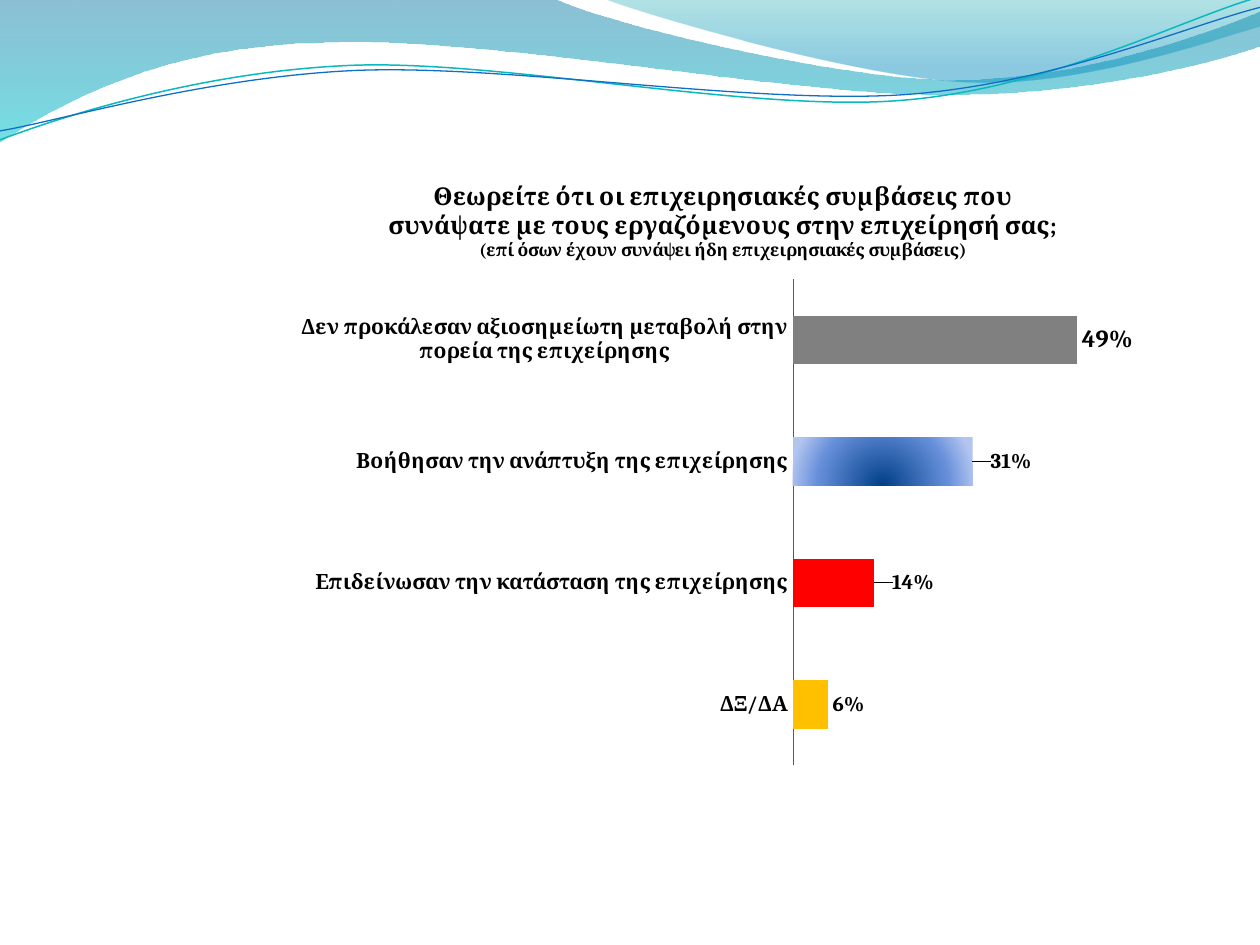
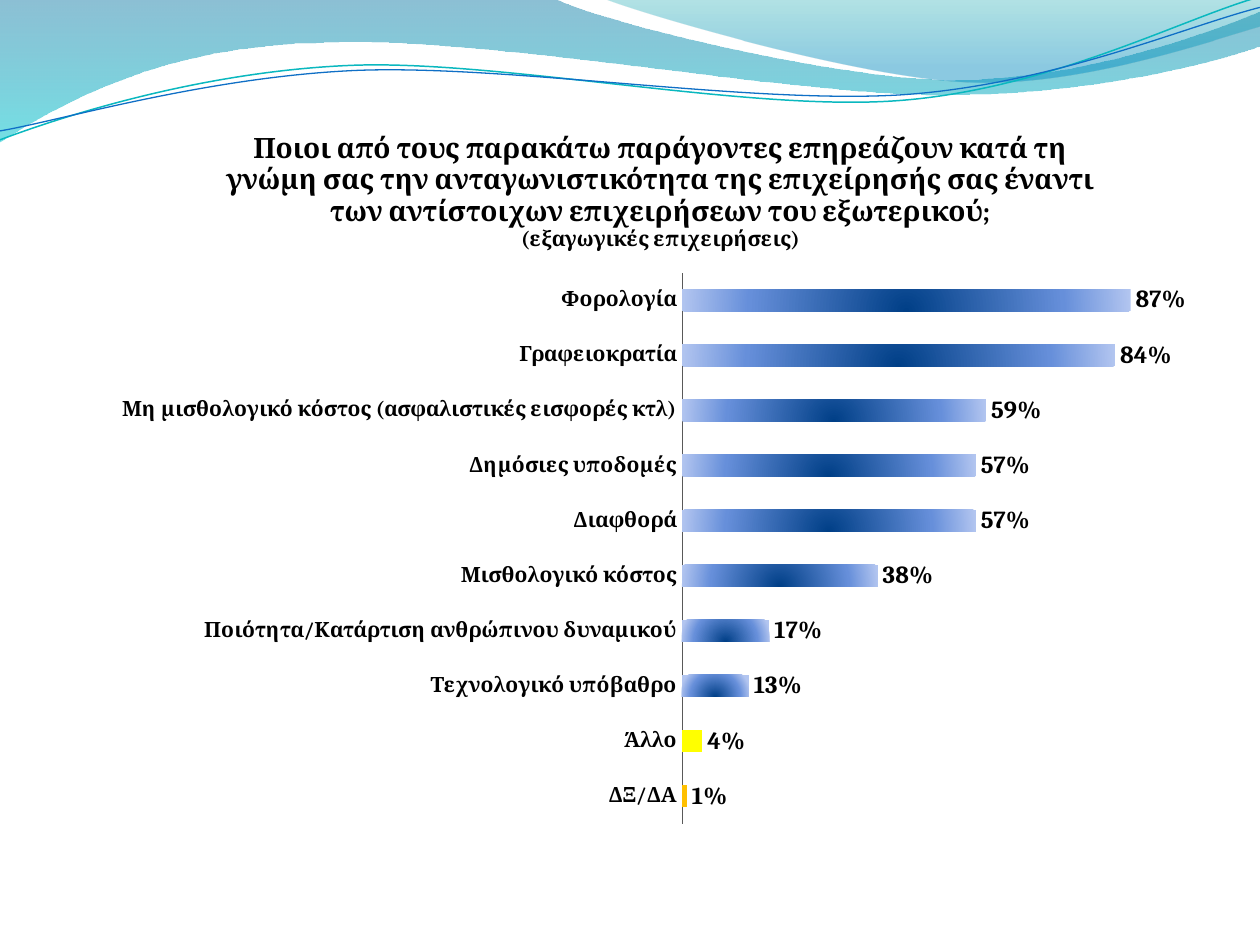
"""Build two survey slides with bar charts under a shared wave header."""
from lxml import etree
from pptx import Presentation
from pptx.chart.data import CategoryChartData
from pptx.dml.color import RGBColor
from pptx.enum.chart import XL_CHART_TYPE, XL_LABEL_POSITION, XL_TICK_LABEL_POSITION, XL_TICK_MARK
from pptx.oxml import parse_xml
from pptx.oxml.ns import nsdecls, qn
from pptx.util import Cm, Pt

BAR_CLUSTERED = XL_CHART_TYPE.BAR_CLUSTERED
OUTSIDE_END = XL_LABEL_POSITION.OUTSIDE_END
NEXT_TO_AXIS = XL_TICK_LABEL_POSITION.NEXT_TO_AXIS
NO_TICKS = XL_TICK_MARK.NONE

FONT = "Cambria"
BLANK_LAYOUT = 6
COLORS = {
    "text": "000000", "axis": "595959",
    "gray": "808080", "red": "FF0000", "amber": "FFC000", "yellow": "FFFF00",
    "bar_center": "003F87", "bar_middle": "668FDA", "bar_edge": "B2C5F0",
    "band_blue": "0074A1", "band_aqua": "00C6CF",
    "veil_teal": "00A1A9", "veil_blue": "008BBF",
    "line_teal": "0AB8BF", "line_blue": "0F6FC6",
}
BAR_STOPS = [(0, "bar_center", 100), (70, "bar_middle", 100), (100, "bar_edge", 100)]
RADIAL = '<a:path path="circle"><a:fillToRect l="50000" t="100000" r="50000"/></a:path>'
DOWNWARD = '<a:lin ang="5400000" scaled="0"/>'
NO_LEADER_LINES = (
    f'<c:extLst {nsdecls("c")}><c:ext uri="{{CE6537A1-D6FC-4f65-9D91-7224C49458BB}}" '
    'xmlns:c15="http://schemas.microsoft.com/office/drawing/2012/chart">'
    '<c15:showLeaderLines val="0"/></c:ext></c:extLst>')

WAVE_BANDS = [
    {
        "start": (0, -0.03),
        "segments": [
            (11.18, -0.03),
            (12.09, 0.43, 16.87, 1.6, 19.25, 1.6),
            (21.79, 1.6, 24.33, 0.66, 25.4, 0.23),
            (25.43, 0.91),
            (24.97, 1.12, 22.1, 1.93, 18.95, 1.91),
            (15.8, 1.91, 9.7, 0.71, 6.53, 0.86),
            (3.28, 0.89, 1.17, 2.11, -0.03, 2.87),
        ],
        "stops": [(0, "band_blue", 45), (100, "band_aqua", 55)],
    },
    {
        "start": (12.17, -0.03),
        "segments": [
            (12.93, 0.28, 17.32, 1.57, 19.53, 1.65),
            (21.74, 1.75, 24.41, 0.81, 25.4, 0.53),
            (25.4, 0),
        ],
        "stops": [(0, "veil_teal", 30), (80, "veil_blue", 45)],
    },
]
WAVE_LINES = [
    {
        "start": (0, 2.82),
        "segments": [
            (1.22, 2.36, 4.01, 1.45, 7.04, 1.32),
            (10.03, 1.19, 15.06, 2.26, 18.11, 2.03),
            (21.16, 1.8, 23.83, 0.38, 25.35, -0.05),
        ],
        "color": "line_teal", "width": 0.85,
    },
    {
        "start": (0, 2.64),
        "segments": [
            (1.19, 2.44, 4.17, 1.55, 7.19, 1.42),
            (10.24, 1.3, 15.16, 2.11, 18.21, 1.91),
            (21.23, 1.7, 23.9, 0.53, 25.4, 0.15),
        ],
        "color": "line_blue", "width": 0.75,
    },
]

SURVEY_CHARTS = [
    {
        "title": [
            ("Θεωρείτε ότι οι επιχειρησιακές συμβάσεις που συνάψατε με τους "
             "εργαζόμενους στην επιχείρησή σας;", 14),
            ("(επί όσων έχουν συνάψει ήδη επιχειρησιακές συμβάσεις)", 10),
        ],
        "answers": [
            ("Δεν προκάλεσαν αξιοσημείωτη μεταβολή στην πορεία της επιχείρησης", 0.49),
            ("Βοήθησαν την ανάπτυξη της επιχείρησης", 0.31),
            ("Επιδείνωσαν την κατάσταση της επιχείρησης", 0.14),
            ("ΔΞ/ΔΑ", 0.06),
        ],
        "box": (5.72, 3.18, 17.7, 12.5),
        "plot": {"x": 0.58, "y": 0.196, "w": 0.396, "h": 0.784},
        "maximum": 0.6,
        "reverse": True,
        "point_colors": {0: "gray", 2: "red", 3: "amber"},
        "label_size": 12,
        "label_sizes": {0: 14},
        "label_shifts": {1: 0.015, 2: 0.015},
    },
    {
        "title": [
            ("Ποιοι από τους παρακάτω παράγοντες επηρεάζουν κατά τη γνώμη σας την "
             "ανταγωνιστικότητα της επιχείρησής σας έναντι των αντίστοιχων "
             "επιχειρήσεων του εξωτερικού;", 16),
            ("(εξαγωγικές επιχειρήσεις)", 12),
        ],
        "answers": [
            ("ΔΞ/ΔΑ", 0.01),
            ("Άλλο", 0.04),
            ("Τεχνολογικό υπόβαθρο", 0.13),
            ("Ποιότητα/Κατάρτιση ανθρώπινου δυναμικού", 0.17),
            ("Μισθολογικό κόστος", 0.38),
            ("Διαφθορά", 0.57),
            ("Δημόσιες υποδομές", 0.57),
            ("Μη μισθολογικό κόστος (ασφαλιστικές εισφορές κτλ)", 0.59),
            ("Γραφειοκρατία", 0.84),
            ("Φορολογία", 0.87),
        ],
        "box": (2.01, 2.13, 22.61, 14.76),
        "plot": {"x": 0.519, "y": 0.228, "w": 0.46, "h": 0.753},
        "maximum": 1,
        "reverse": False,
        "point_colors": {0: "amber", 1: "yellow"},
        "label_size": 14,
        "label_sizes": {},
        "label_shifts": {},
    },
]


def color(name):
    """Return the named colour."""
    return RGBColor.from_string(COLORS[name])


def format_font(font, *, size, bold=True):
    """Apply the shared typeface and colour to a font."""
    font.name = FONT
    font.size = Pt(size)
    font.bold = bold
    font.color.rgb = color("text")


def write_text(paragraph, text, *, size, bold=True):
    """Write one formatted run into a paragraph."""
    run = paragraph.add_run()
    run.text = text
    format_font(run.font, size=size, bold=bold)


def set_gradient(fill, properties, stops, direction):
    """Replace the fill of a properties element by a gradient."""
    fill.solid()
    stop_xml = "".join(
        f'<a:gs pos="{position * 1000}"><a:srgbClr val="{COLORS[name]}">'
        f'<a:alpha val="{opacity * 1000}"/></a:srgbClr></a:gs>'
        for position, name, opacity in stops)
    gradient = parse_xml(
        f'<a:gradFill {nsdecls("a")} rotWithShape="1">'
        f"<a:gsLst>{stop_xml}</a:gsLst>{direction}</a:gradFill>")
    properties.replace(properties.find(qn("a:solidFill")), gradient)


def manual_layout(parent, index, settings):
    """Insert a manual chart layout as the given child of an element."""
    for layout in parent.findall(qn("c:layout")):
        parent.remove(layout)
    layout = etree.Element(qn("c:layout"))
    manual = etree.SubElement(layout, qn("c:manualLayout"))
    for tag, value in settings.items():
        etree.SubElement(manual, qn(f"c:{tag}")).set("val", str(value))
    parent.insert(index, layout)


def add_outline(slide, wave, *, close):
    """Draw one wave outline of straight and cubic segments without shadow."""
    start_x, start_y = wave["start"]
    builder = slide.shapes.build_freeform(Cm(start_x), Cm(start_y))
    ends = [(Cm(segment[-2]), Cm(segment[-1])) for segment in wave["segments"]]
    builder.add_line_segments(ends, close=close)
    shape = builder.convert_to_shape()
    shape.shadow.inherit = False
    steps = list(shape.element.iter(qn("a:lnTo")))
    for step, segment in zip(steps, wave["segments"]):
        if len(segment) == 6:
            curve = etree.Element(qn("a:cubicBezTo"))
            for x, y in zip(segment[::2], segment[1::2]):
                point = etree.SubElement(curve, qn("a:pt"))
                point.set("x", str(Cm(x) - shape.left))
                point.set("y", str(Cm(y) - shape.top))
            step.getparent().replace(step, curve)
    return shape


def add_wave_header(slide):
    """Draw the wave header and hand it to the slide's layout."""
    layout = slide.slide_layout
    for placeholder in list(layout.placeholders):
        placeholder.element.getparent().remove(placeholder.element)
    shapes = []
    for wave in WAVE_BANDS:
        shape = add_outline(slide, wave, close=True)
        set_gradient(shape.fill, shape.element.spPr, wave["stops"], DOWNWARD)
        shape.line.fill.background()
        shapes.append(shape)
    for wave in WAVE_LINES:
        shape = add_outline(slide, wave, close=False)
        shape.fill.background()
        shape.line.color.rgb = color(wave["color"])
        shape.line.width = Pt(wave["width"])
        shapes.append(shape)
    for shape in shapes:
        layout.element.cSld.spTree.append(shape.element)


def format_axes(chart, survey):
    """Show the category axis only and fix the value range."""
    categories, values = chart.category_axis, chart.value_axis
    categories.reverse_order = survey["reverse"]
    categories.major_tick_mark = NO_TICKS
    categories.tick_label_position = NEXT_TO_AXIS
    categories.format.line.color.rgb = color("axis")
    categories.format.line.width = Pt(0.25)
    format_font(categories.tick_labels.font, size=12)
    values.minimum_scale = 0
    values.maximum_scale = survey["maximum"]
    values.has_major_gridlines = False
    values.visible = False


def format_bars(plot, survey):
    """Colour the bars and place their value labels."""
    plot.gap_width = 150
    plot.vary_by_categories = False
    series = plot.series[0]
    series.invert_if_negative = False
    set_gradient(series.format.fill, series._element.get_or_add_spPr(), BAR_STOPS, RADIAL)
    for index, name in survey["point_colors"].items():
        fill = series.points[index].format.fill
        fill.solid()
        fill.fore_color.rgb = color(name)

    labels = series.data_labels
    labels.show_value = True
    labels.number_format = "0%"
    labels.number_format_is_linked = False
    labels.position = OUTSIDE_END
    format_font(labels.font, size=survey["label_size"])
    for index in sorted({*survey["label_sizes"], *survey["label_shifts"]}):
        label = series.points[index].data_label
        format_font(label.font, size=survey["label_sizes"].get(index, survey["label_size"]))
        label.position = OUTSIDE_END
        if index in survey["label_shifts"]:
            manual_layout(label._get_or_add_dLbl(), 1,
                          {"x": survey["label_shifts"][index], "y": 0})
    series._element.find(qn("c:dLbls")).append(parse_xml(NO_LEADER_LINES))


def add_survey_chart(slide, survey):
    """Add one survey question as a bar chart."""
    data = CategoryChartData(number_format="0%")
    data.categories = [answer for answer, share in survey["answers"]]
    data.add_series("Series 1", [share for answer, share in survey["answers"]])
    box = [Cm(length) for length in survey["box"]]
    chart = slide.shapes.add_chart(BAR_CLUSTERED, *box, data).chart
    chart.has_legend = False
    format_font(chart.font, size=10, bold=False)

    title = chart.chart_title
    title.include_in_layout = False
    for index, (text, size) in enumerate(survey["title"]):
        frame = title.text_frame
        paragraph = frame.add_paragraph() if index else frame.paragraphs[0]
        write_text(paragraph, text, size=size)

    format_axes(chart, survey)
    format_bars(chart.plots[0], survey)
    manual_layout(chart._chartSpace.chart.plotArea, 0,
                  {"layoutTarget": "inner", "xMode": "edge", "yMode": "edge",
                   **survey["plot"]})


def main():
    """Create the presentation."""
    presentation = Presentation()
    presentation.slide_width, presentation.slide_height = Cm(25.4), Cm(19.05)
    layout = presentation.slide_layouts[BLANK_LAYOUT]
    slides = [presentation.slides.add_slide(layout) for survey in SURVEY_CHARTS]
    add_wave_header(slides[0])
    for slide, survey in zip(slides, SURVEY_CHARTS):
        add_survey_chart(slide, survey)
    presentation.save("out.pptx")


if __name__ == "__main__":
    main()
